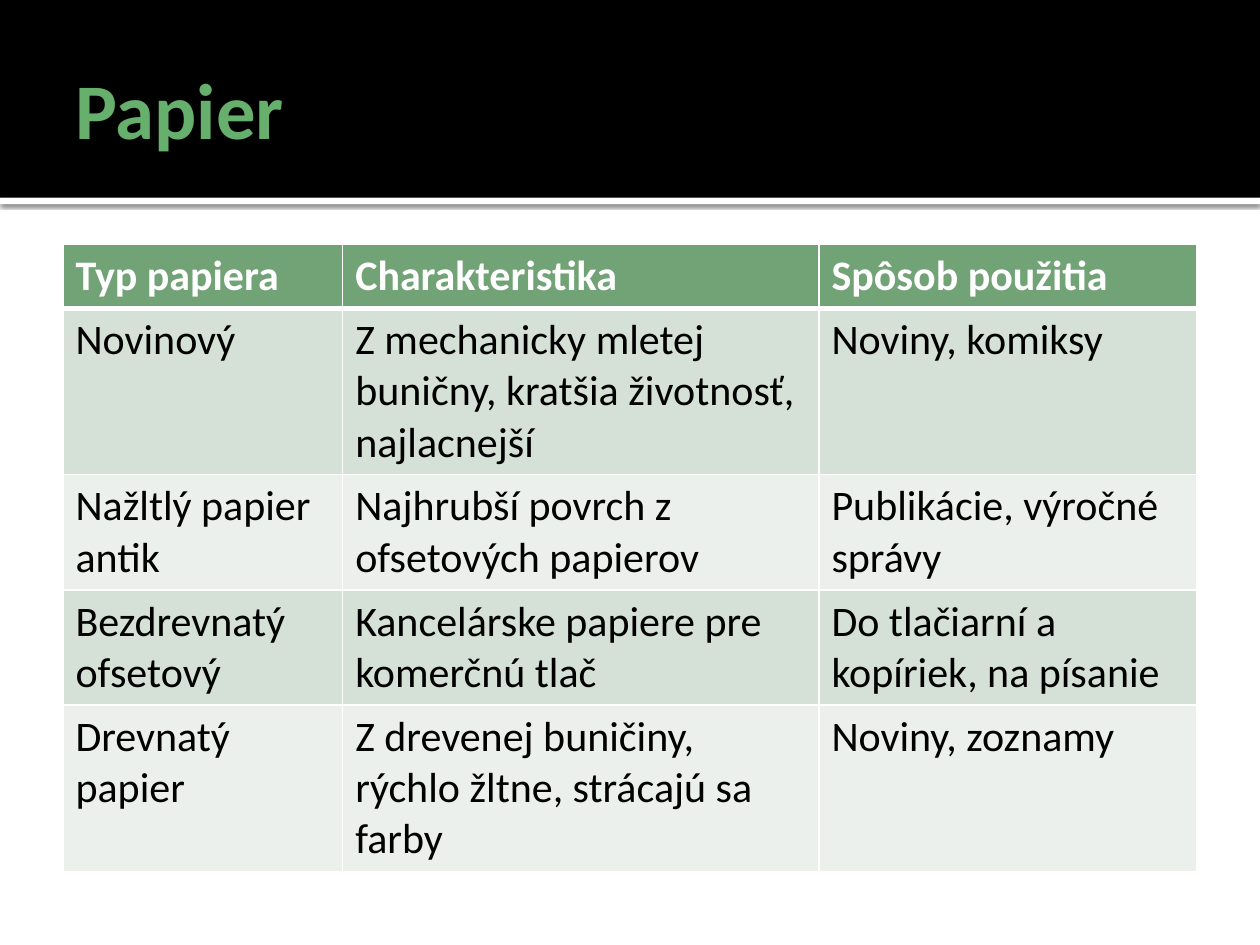
"""Build the slide on paper types and their uses."""
from dataclasses import dataclass

from lxml import etree
from pptx import Presentation
from pptx.dml.color import RGBColor
from pptx.enum.shapes import MSO_SHAPE
from pptx.enum.text import MSO_ANCHOR, PP_ALIGN
from pptx.oxml import parse_xml
from pptx.oxml.ns import qn
from pptx.util import Inches, Pt

RECTANGLE = MSO_SHAPE.RECTANGLE
LEFT = PP_ALIGN.LEFT
TOP, MIDDLE = MSO_ANCHOR.TOP, MSO_ANCHOR.MIDDLE
DRAWING = "http://schemas.openxmlformats.org/drawingml/2006/main"
TITLE_ONLY = 5


@dataclass(frozen=True)
class Theme:
    font: str = "Calibri"
    title_size: int = 45
    table_size: int = 24
    black: str = "000000"
    white: str = "FFFFFF"
    title: str = "66AF6C"
    header: str = "72A376"
    bands: tuple = ("D5E0D6", "EBF0EC")


def write_text(frame, text, *, size, color, bold=False, anchor=TOP):
    frame.word_wrap = True
    frame.vertical_anchor = anchor
    para = frame.paragraphs[0]
    para.alignment = LEFT
    span = para.add_run()
    span.text = text
    span.font.name = theme.font
    span.font.size = Pt(size)
    span.font.bold = bold
    span.font.color.rgb = RGBColor.from_string(color)


def add_border(cell, side, width):
    properties = cell._tc.get_or_add_tcPr()
    line = etree.SubElement(properties, qn(f"a:ln{side}"), w=str(Pt(width)))
    fill = etree.SubElement(line, qn("a:solidFill"))
    etree.SubElement(fill, qn("a:srgbClr"), val=theme.white)


theme = Theme()
deck = Presentation()
deck.slide_width, deck.slide_height = Inches(10), Inches(7.5)
page = deck.slides.add_slide(deck.slide_layouts[TITLE_ONLY])
page.background.fill.solid()
page.background.fill.fore_color.rgb = RGBColor.from_string(theme.white)

bands = []
for top, height, color in ((1.57, 0.05, theme.white), (0, 1.57, theme.black)):
    band = page.shapes.add_shape(RECTANGLE, 0, Inches(top), Inches(10), Inches(height))
    band.shadow.inherit = False
    band.fill.solid()
    band.fill.fore_color.rgb = RGBColor.from_string(color)
    band.line.fill.background()
    bands.append(band)

effects = bands[0]._element.spPr.find(qn("a:effectLst"))
effects.append(parse_xml(
    f'<a:outerShdw xmlns:a="{DRAWING}" blurRad="{Pt(2.5)}" dist="{Pt(0.8)}" '
    f'dir="5400000" algn="t" rotWithShape="0"><a:srgbClr val="{theme.black}">'
    '<a:alpha val="60000"/></a:srgbClr></a:outerShdw>'))

title = page.shapes.title
page.shapes._spTree.append(title._element)
title.left, title.top = Inches(0.5), Inches(0.17)
title.width, title.height = Inches(9), Inches(1.37)
title.text_frame.margin_left = Inches(0.1)
title.text_frame.margin_right = Inches(0.05)
title.text_frame.margin_top = title.text_frame.margin_bottom = Inches(0.05)
write_text(title.text_frame, "Papier", size=theme.title_size, color=theme.title,
           bold=True, anchor=MIDDLE)

rows = (
    ("Typ papiera", "Charakteristika", "Spôsob použitia"),
    ("Novinový", "Z mechanicky mletej buničny, kratšia životnosť, najlacnejší",
     "Noviny, komiksy"),
    ("Nažltlý papier antik", "Najhrubší povrch z ofsetových papierov",
     "Publikácie, výročné správy"),
    ("Bezdrevnatý ofsetový", "Kancelárske papiere pre komerčnú tlač",
     "Do tlačiarní a kopíriek, na písanie"),
    ("Drevnatý papier", "Z drevenej buničiny, rýchlo žltne, strácajú sa farby",
     "Noviny, zoznamy"),
)
column_widths = (2.22, 3.78, 3)
row_heights = (0.5, 1.3, 0.9, 0.9, 1.3)

table = page.shapes.add_table(len(rows), len(column_widths), Inches(0.5), Inches(1.94),
                              Inches(sum(column_widths)), Inches(sum(row_heights))).table
for column, width in zip(table.columns, column_widths):
    column.width = Inches(width)

for row_number, (texts, height) in enumerate(zip(rows, row_heights)):
    table.rows[row_number].height = Inches(height)
    is_header = row_number == 0
    fill_color = theme.header if is_header else theme.bands[(row_number - 1) % 2]
    border_widths = {"L": 1, "R": 1, "T": 3 if row_number == 1 else 1,
                     "B": 3 if is_header else 1}
    for column_number, text in enumerate(texts):
        cell = table.cell(row_number, column_number)
        for side, width in border_widths.items():
            add_border(cell, side, width)
        cell.fill.solid()
        cell.fill.fore_color.rgb = RGBColor.from_string(fill_color)
        write_text(cell.text_frame, text, size=theme.table_size, bold=is_header,
                   color=theme.white if is_header else theme.black)

deck.save("out.pptx")
